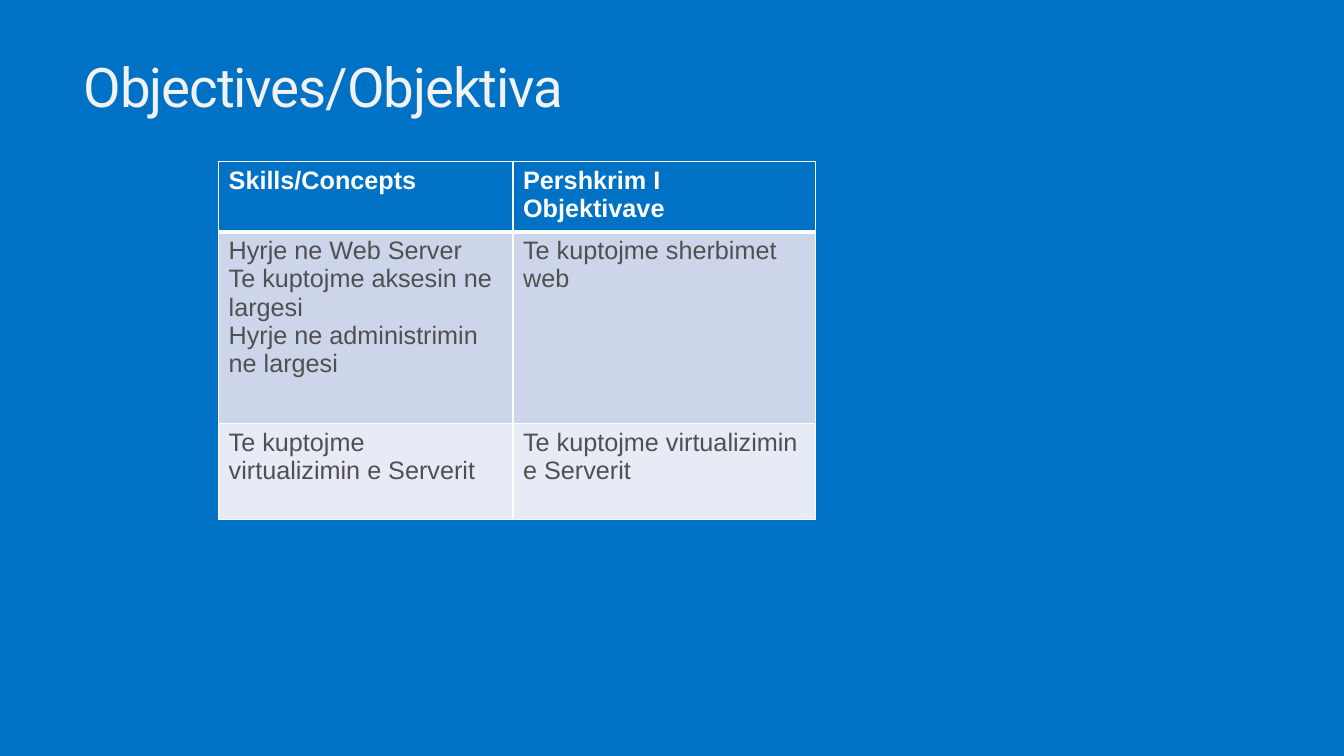
from lxml.etree import SubElement
from pptx import Presentation
from pptx.dml.color import RGBColor
from pptx.enum.text import MSO_ANCHOR, PP_ALIGN
from pptx.oxml.ns import qn
from pptx.util import Cm, Pt

BLUE, WHITE, TITLE_WHITE, GREY = "0072C6", "FFFFFF", "F2F2F2", "505050"
ROW_FILLS = [BLUE, "CCD5EA", "E7EBF5"]
COLUMN_WIDTHS = [7.42, 7.62]
ROW_HEIGHTS = [1.78, 4.83, 2.43]
OBJECTIVES = [
    ["Skills/Concepts", "Pershkrim I Objektivave"],
    ["Hyrje ne Web Server\nTe kuptojme aksesin ne largesi\n"
     "Hyrje ne administrimin ne largesi", "Te kuptojme sherbimet web"],
    ["Te kuptojme virtualizimin e Serverit"] * 2,
]


def color(value):
    return RGBColor.from_string(value)


def set_font(paragraph, name, size, value, bold=False):
    font = paragraph.font
    font.name, font.size, font.bold = name, Pt(size), bold
    font.color.rgb = color(value)


def set_borders(cell, bottom_width, top_width):
    """Draw white cell borders; call before filling the cell."""
    properties = cell._tc.get_or_add_tcPr()
    widths = {"a:lnL": 1, "a:lnR": 1, "a:lnT": top_width, "a:lnB": bottom_width}
    for tag, width in widths.items():
        line = SubElement(properties, qn(tag), w=str(Pt(width)))
        fill = SubElement(line, qn("a:solidFill"))
        SubElement(fill, qn("a:srgbClr"), val=WHITE)


def add_title(slide, left, top, width, height):
    title = slide.shapes.title
    title.left, title.top = Cm(left), Cm(top)
    title.width, title.height = Cm(width), Cm(height)
    frame = title.text_frame
    frame.text = "Objectives/Objektiva"
    frame.vertical_anchor = MSO_ANCHOR.TOP
    frame.margin_left = frame.margin_right = Cm(0.41)
    frame.margin_top = frame.margin_bottom = Cm(0.25)
    paragraph = frame.paragraphs[0]
    paragraph.alignment = PP_ALIGN.LEFT
    paragraph.line_spacing = 0.9
    set_font(paragraph, "Roboto", 39, TITLE_WHITE)
    # Slightly tightened letters
    paragraph.runs[0].font._element.set("spc", "-80")


def add_objectives_table(slide, left, top):
    table = slide.shapes.add_table(
        len(OBJECTIVES), len(COLUMN_WIDTHS), Cm(left), Cm(top),
        Cm(sum(COLUMN_WIDTHS)), Cm(sum(ROW_HEIGHTS))).table
    for column, width in zip(table.columns, COLUMN_WIDTHS):
        column.width = Cm(width)
    for row_index, (row, height) in enumerate(zip(table.rows, ROW_HEIGHTS)):
        row.height = Cm(height)
        is_header = row_index == 0
        for cell, text in zip(row.cells, OBJECTIVES[row_index]):
            set_borders(cell, 3 if is_header else 1, 3 if row_index == 1 else 1)
            cell.fill.solid()
            cell.fill.fore_color.rgb = color(ROW_FILLS[row_index])
            cell.text = text
            for paragraph in cell.text_frame.paragraphs:
                set_font(paragraph, "Arial", 18, WHITE if is_header else GREY, is_header)


def main():
    presentation = Presentation()
    presentation.slide_width, presentation.slide_height = Cm(33.87), Cm(19.05)
    slide = presentation.slides.add_slide(presentation.slide_layouts[5])
    # Background
    slide.background.fill.solid()
    slide.background.fill.fore_color.rgb = color(BLUE)
    # Title and table
    add_title(slide, 1.7, 1.27, 30.48, 2.54)
    add_objectives_table(slide, 5.51, 4.06)
    presentation.save("out.pptx")


if __name__ == "__main__":
    main()
